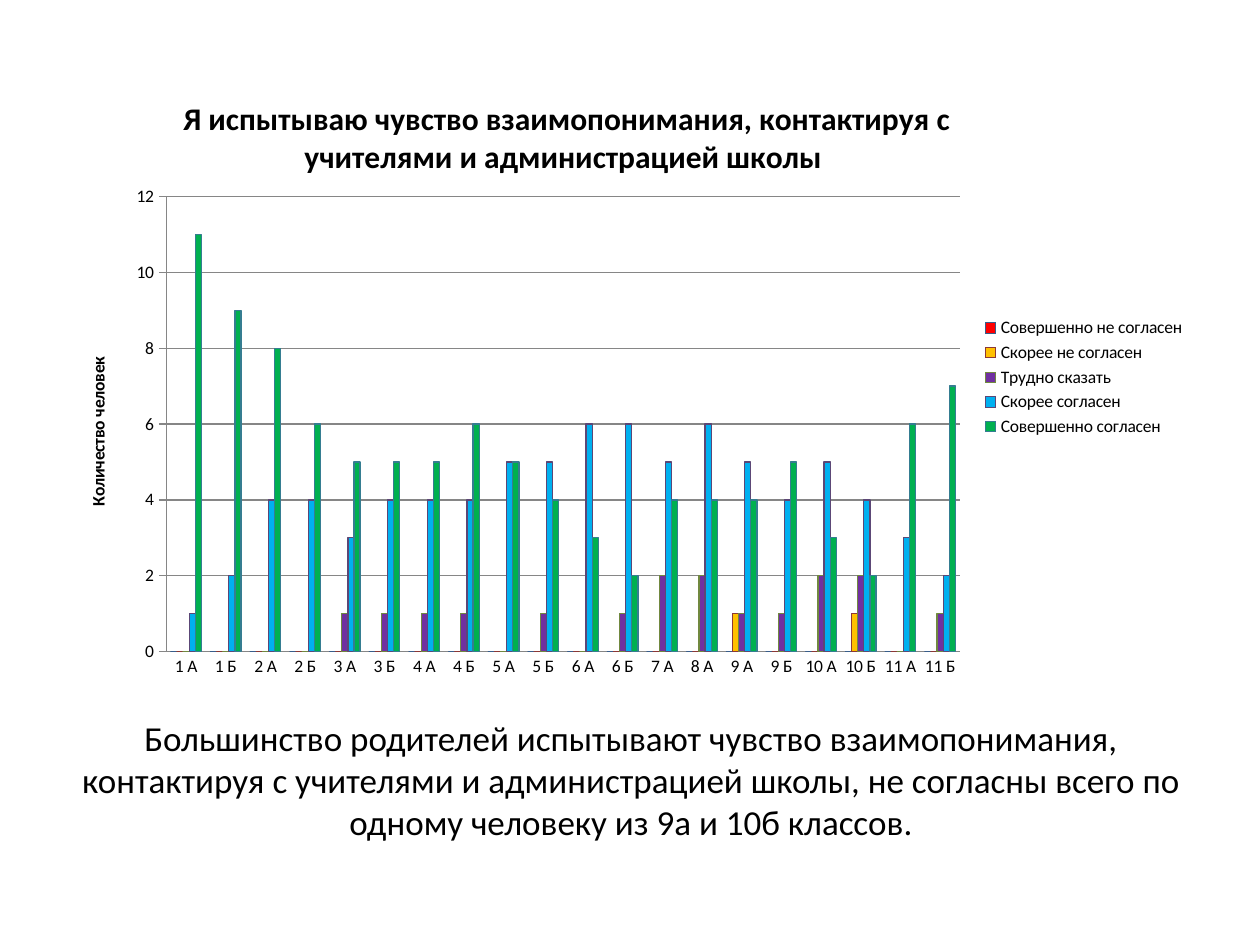
from dataclasses import dataclass

from lxml.etree import SubElement
from pptx import Presentation
from pptx.chart.data import CategoryChartData
from pptx.dml.color import RGBColor
from pptx.enum.chart import XL_CHART_TYPE as ChartType, XL_LEGEND_POSITION as LegendPosition, XL_TICK_MARK as TickMark
from pptx.enum.text import MSO_ANCHOR as Anchor, PP_ALIGN as Align
from pptx.oxml.ns import qn
from pptx.util import Inches, Pt

FONT = "Calibri"
BLACK = RGBColor(0x00, 0x00, 0x00)
GRAY = RGBColor(0x86, 0x86, 0x86)
LEFT, WIDTH = Inches(0.51), Inches(9)
QUESTION = "Я испытываю чувство взаимопонимания, контактируя с учителями и администрацией школы "
CONCLUSION = (
    "Большинство родителей испытывают чувство взаимопонимания, контактируя с учителями "
    "и администрацией школы, не согласны всего по одному человеку из 9а и 10б классов."
)
CLASSES = [f"{grade} {letter}" for grade in range(1, 12) for letter in "АБ"
           if (grade, letter) not in ((7, "Б"), (8, "Б"))]


@dataclass(frozen=True)
class Answer:
    name: str
    counts: tuple[int, ...]
    fill: RGBColor
    outline: RGBColor


ANSWERS = [
    Answer("Совершенно не согласен", (0,) * 20, RGBColor(0xFF, 0x00, 0x00), RGBColor(0x38, 0x5D, 0x8A)),
    Answer("Скорее не согласен", (0,) * 14 + (1, 0, 0, 1, 0, 0),
           RGBColor(0xFF, 0xC0, 0x00), RGBColor(0x8C, 0x38, 0x36)),
    Answer("Трудно сказать", (0, 0, 0, 0, 1, 1, 1, 1, 0, 1, 0, 1, 2, 2, 1, 1, 2, 2, 0, 1),
           RGBColor(0x70, 0x30, 0xA0), RGBColor(0x71, 0x89, 0x3F)),
    Answer("Скорее согласен", (1, 2, 4, 4, 3, 4, 4, 4, 5, 5, 6, 6, 5, 6, 5, 4, 5, 4, 3, 2),
           RGBColor(0x00, 0xB0, 0xF0), RGBColor(0x5C, 0x47, 0x76)),
    Answer("Совершенно согласен", (11, 9, 8, 6, 5, 5, 5, 6, 5, 4, 3, 2, 4, 4, 4, 5, 3, 2, 6, 7),
           RGBColor(0x00, 0xB0, 0x50), RGBColor(0x35, 0x7D, 0x91)),
]


def add_run(paragraph, text: str, size: float, bold: bool = False) -> None:
    run = paragraph.add_run()
    run.text = text
    run.font.name, run.font.size, run.font.bold = FONT, Pt(size), bold
    run.font.color.rgb = BLACK


def place(part, index: int, **fractions: float) -> None:
    for old in part.findall(qn("c:layout")):
        part.remove(old)
    layout = SubElement(part, qn("c:layout"))
    part.insert(index, layout)
    manual = SubElement(layout, qn("c:manualLayout"))
    if "w" in fractions:
        SubElement(manual, qn("c:layoutTarget")).set("val", "inner")
    for side in "xy":
        SubElement(manual, qn(f"c:{side}Mode")).set("val", "edge")
    for key, value in fractions.items():
        SubElement(manual, qn(f"c:{key}")).set("val", str(value))


def style_axis(axis, tick: TickMark) -> None:
    axis.major_tick_mark, axis.minor_tick_mark = tick, TickMark.NONE
    axis.format.line.color.rgb = GRAY
    axis.format.line.width = Pt(0.75)


def add_survey_chart(slide, answers: list[Answer]) -> None:
    survey = CategoryChartData()
    survey.categories = CLASSES
    for answer in answers:
        survey.add_series(answer.name, answer.counts)
    chart = slide.shapes.add_chart(
        ChartType.COLUMN_CLUSTERED, LEFT, Inches(0.52), WIDTH, Inches(4.95), survey).chart
    chart.font.name, chart.font.size = FONT, Pt(10)
    chart.font.color.rgb = BLACK

    chart.has_title = True
    add_run(chart.chart_title.text_frame.paragraphs[0], QUESTION, 18, True)
    chart.has_legend = True
    chart.legend.position = LegendPosition.RIGHT
    chart.legend.include_in_layout = False

    columns = chart.plots[0]
    columns.gap_width, columns.vary_by_categories = 150, False
    for series, answer in zip(columns.series, answers):
        series.format.fill.solid()
        series.format.fill.fore_color.rgb = answer.fill
        series.format.line.color.rgb = answer.outline
        series.format.line.width = Pt(0.75)

    style_axis(chart.category_axis, TickMark.NONE)
    people = chart.value_axis
    style_axis(people, TickMark.OUTSIDE)
    people.minimum_scale, people.maximum_scale, people.major_unit = 0, 12, 2
    people.major_gridlines.format.line.color.rgb = GRAY
    add_run(people.axis_title.text_frame.paragraphs[0], "Количество человек", 10, True)

    place(chart.chart_title._element, 1, x=0.1, y=0.04)
    place(chart._chartSpace.chart.plotArea, 0, x=0.09, y=0.21, w=0.7, h=0.73)


def add_conclusion(slide, text: str) -> None:
    frame = slide.shapes.add_textbox(LEFT, Inches(5.56), WIDTH, Inches(1.25)).text_frame
    frame.word_wrap, frame.vertical_anchor = True, Anchor.MIDDLE
    frame.paragraphs[0].alignment = Align.CENTER
    add_run(frame.paragraphs[0], text, 20)


def main() -> None:
    """Build the slide with the parents' survey by class and its conclusion."""
    deck = Presentation()
    deck.slide_width, deck.slide_height = Inches(10), Inches(7.5)
    slide = deck.slides.add_slide(deck.slide_layouts[6])
    add_conclusion(slide, CONCLUSION)
    add_survey_chart(slide, ANSWERS)
    deck.save("out.pptx")


if __name__ == "__main__":
    main()
